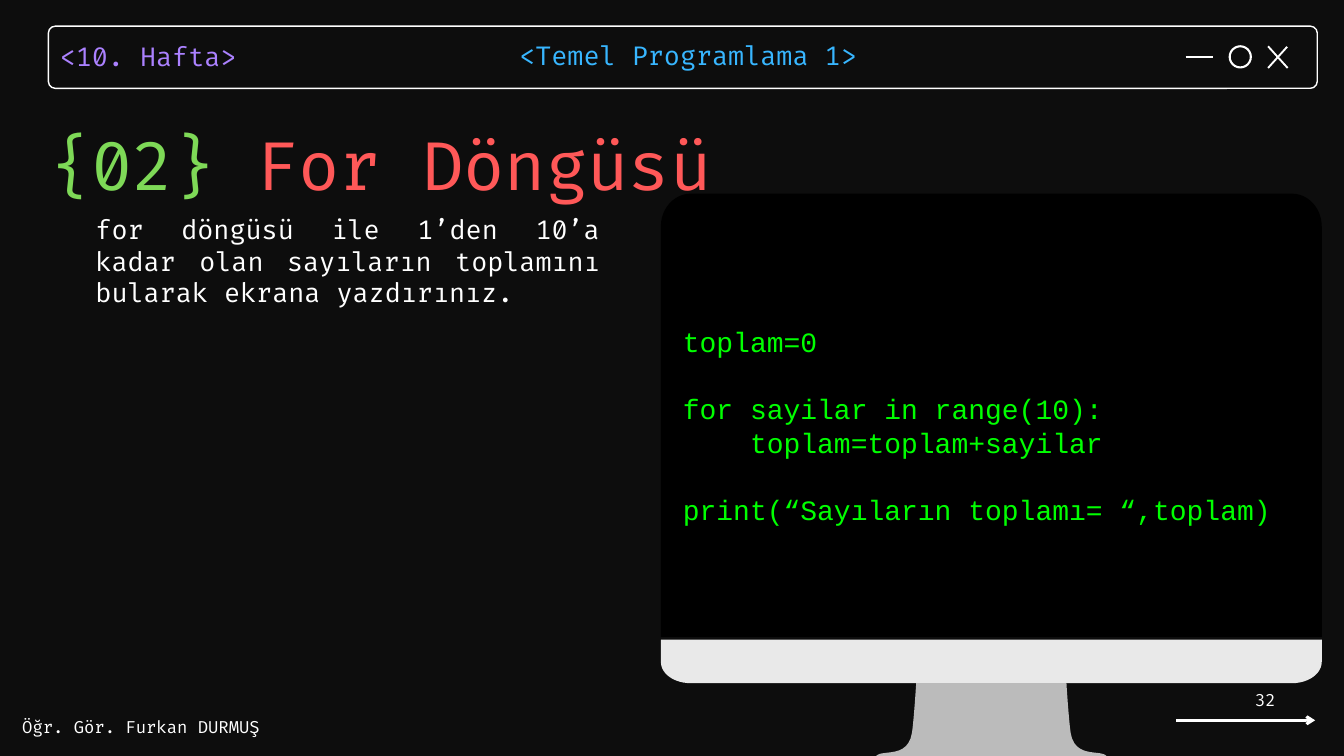
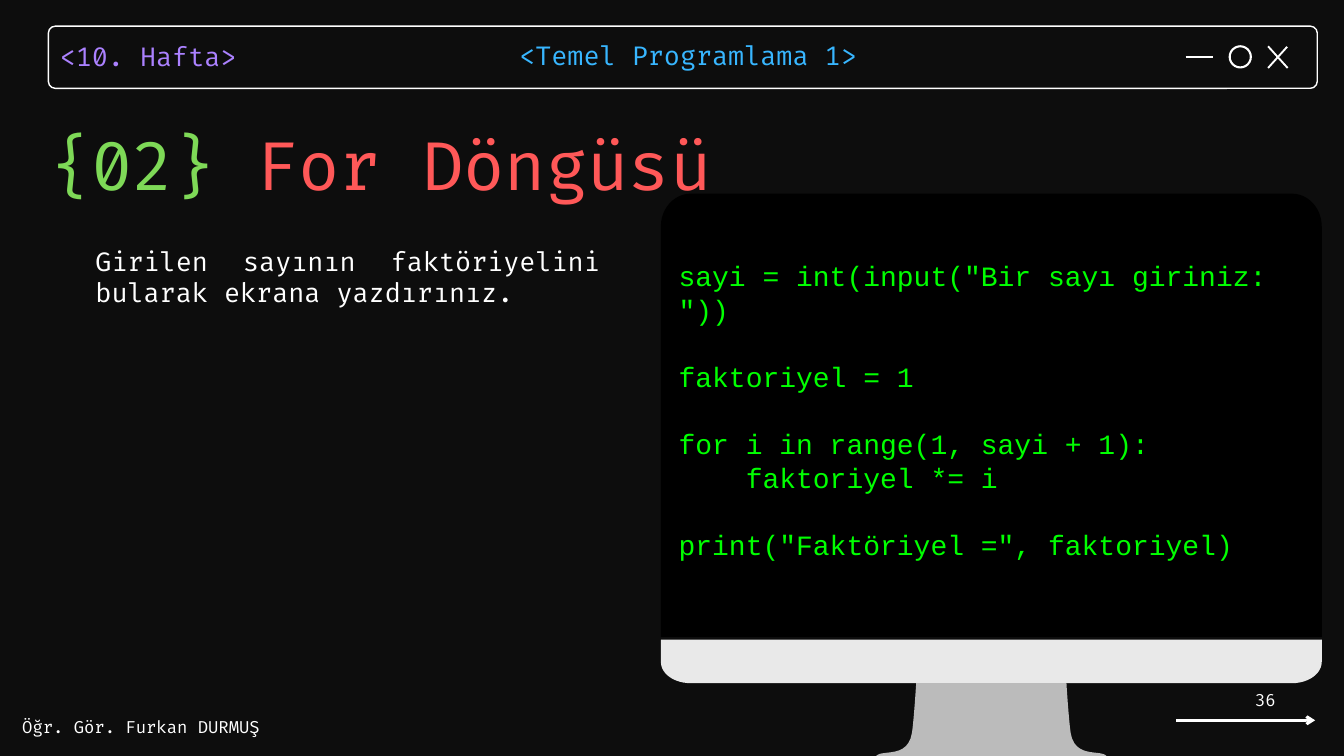
from dataclasses import dataclass

from lxml.etree import SubElement
from pptx import Presentation
from pptx.dml.color import RGBColor
from pptx.enum.shapes import MSO_CONNECTOR, MSO_SHAPE
from pptx.enum.text import MSO_ANCHOR, PP_ALIGN
from pptx.oxml.ns import qn
from pptx.util import Cm, Pt


@dataclass(frozen=True)
class Theme:
    background: str = "0D0D0D"
    white: str = "FFFFFF"
    week: str = "AB81FF"
    course: str = "38B6FF"
    number: str = "7ED957"
    heading: str = "FF5858"
    screen: str = "000000"
    chin: str = "E9E9E9"
    stand: str = "BBBBBB"
    code: str = "00FF00"
    font: str = "Fira Code"
    code_font: str = "Courier New"
    title_size: float = 72
    code_size: float = 30
    body_size: float = 28
    small_size: float = 18
    title_leading: float = 102.6
    header_leading: float = 39.2
    code_gap: float = 36


THEME = Theme()
MONITOR_CENTRE = 37.47
CURVE_STEPS = 12

BEZEL = [
    [(0, 7.32)],
    [(11.35, 7.32)],
    [(11.98, 7.32), (12.49, 7.87), (12.49, 8.56)],
    [(12.49, 24.08)],
]
CHIN = [
    [(0, 24.18)],
    [(12.49, 24.18)],
    [(12.49, 25.02)],
    [(12.49, 25.48), (11.98, 25.83), (11.35, 25.83)],
]
STAND = [
    [(0, 25.83)],
    [(2.84, 25.83)],
    [(2.84, 25.83), (2.92, 27.15), (3, 27.71)],
    [(3.15, 28.65), (4.06, 28.35), (4.32, 28.55)],
    [(4.37, 28.58), (4.34, 28.63), (4.29, 28.63)],
]

SUM_TASK = "for döngüsü ile 1’den 10’a kadar olan sayıların toplamını bularak ekrana yazdırınız."
SUM_CODE = """toplam=0

for sayilar in range(10):
    toplam=toplam+sayilar

print(“Sayıların toplamı= “,toplam)"""

FACTORIAL_TASK = "Girilen sayının faktöriyelini bularak ekrana yazdırınız."
FACTORIAL_CODE = """sayi = int(input("Bir sayı giriniz: "))

faktoriyel = 1

for i in range(1, sayi + 1):
    faktoriyel *= i

print("Faktöriyel =", faktoriyel)"""


def rgb(value):
    return RGBColor.from_string(value)


def lengths(*values):
    return [Cm(value) for value in values]


def style_font(font, name, size, color=None):
    font.name = name
    font.size = Pt(size)
    if color:
        font.color.rgb = rgb(color)


def add_frame(slide, box, anchor=MSO_ANCHOR.TOP, insets=(0, 0)):
    frame = slide.shapes.add_textbox(*lengths(*box)).text_frame
    frame.word_wrap = True
    frame.vertical_anchor = anchor
    frame.margin_left = frame.margin_right = Cm(insets[0])
    frame.margin_top = frame.margin_bottom = Cm(insets[1])
    return frame


def add_label(slide, box, runs, size, leading=None, align=None, **frame_options):
    paragraph = add_frame(slide, box, **frame_options).paragraphs[0]
    paragraph.alignment = align
    if leading:
        paragraph.line_spacing = Pt(leading)
    shared_color = runs[0][1] if len(runs) == 1 else None
    style_font(paragraph.font, THEME.font, size, shared_color)
    for text, color in runs:
        run = paragraph.add_run()
        run.text = text
        if not shared_color:
            run.font.color.rgb = rgb(color)


def add_code(slide, box, source):
    frame = add_frame(slide, box)
    paragraph = None
    for block in source.split("\n\n"):
        for position, line in enumerate(block.split("\n")):
            is_first = paragraph is None
            paragraph = frame.paragraphs[0] if is_first else frame.add_paragraph()
            paragraph.text = line
            style_font(paragraph.font, THEME.code_font, THEME.code_size, THEME.code)
            if position == 0 and not is_first:
                paragraph.space_before = Pt(THEME.code_gap)


def add_line(slide, start, end, width, arrow=False):
    line = slide.shapes.add_connector(MSO_CONNECTOR.STRAIGHT, *lengths(*start, *end))
    line.line.color.rgb = rgb(THEME.white)
    line.line.width = Pt(width)
    if arrow:
        SubElement(line.line._get_or_add_ln(), qn("a:tailEnd"), type="arrow")
    SubElement(line._element.spPr, qn("a:effectLst"))


def paint(shape, fill=None, outline=None, width=1):
    shape.shadow.inherit = False
    if fill:
        shape.fill.solid()
        shape.fill.fore_color.rgb = rgb(fill)
    else:
        shape.fill.background()
    if outline:
        shape.line.color.rgb = rgb(outline)
        shape.line.width = Pt(width)
    else:
        shape.line.fill.background()


def add_preset(slide, preset, box, **colors):
    shape = slide.shapes.add_shape(preset, *lengths(*box))
    paint(shape, **colors)
    return shape


def bezier(p0, p1, p2, p3):
    for step in range(1, CURVE_STEPS + 1):
        t = step / CURVE_STEPS
        u = 1 - t
        yield tuple(
            u**3 * a + 3 * u * u * t * b + 3 * u * t * t * c + t**3 * d
            for a, b, c, d in zip(p0, p1, p2, p3)
        )


def add_symmetric(slide, right_half, fill):
    points = []
    for segment in right_half:
        points += bezier(points[-1], *segment) if len(segment) == 3 else segment
    points += [(-x, y) for x, y in reversed(points)]
    outline = [(Cm(MONITOR_CENTRE + x), Cm(y)) for x, y in points]
    builder = slide.shapes.build_freeform(*outline[0])
    builder.add_line_segments(outline[1:], close=True)
    paint(builder.convert_to_shape(), fill=fill)


def add_header(slide):
    add_label(slide, (2.26, 1.32, 8.64, 1.35), [("<10. Hafta>", THEME.week)],
              THEME.body_size, THEME.header_leading)
    bar = add_preset(slide, MSO_SHAPE.ROUNDED_RECTANGLE, (1.83, 0.99, 47.96, 2.35),
                     outline=THEME.white, width=1.5)
    bar.adjustments[0] = 0.11
    add_line(slide, (47.93, 1.75), (48.67, 2.57), 2)
    add_line(slide, (48.65, 1.77), (47.93, 2.57), 2)
    add_line(slide, (44.81, 2.16), (45.85, 2.16), 2)
    add_preset(slide, MSO_SHAPE.OVAL, (46.48, 1.75, 0.8, 0.8),
               outline=THEME.white, width=2.25)
    add_label(slide, (19.63, 1.3, 13.44, 1.35), [("<Temel Programlama 1>", THEME.course)],
              THEME.body_size, THEME.header_leading)


def add_footer(slide, page):
    add_line(slide, (44.45, 27.23), (49.71, 27.23), 3, arrow=True)
    add_label(slide, (0.84, 27.1, 9.32, 0.76), [("Öğr. Gör. Furkan DURMUŞ", THEME.white)],
              THEME.small_size)
    add_label(slide, (42.55, 25.93, 5.92, 1.02), [(page, THEME.white)], THEME.small_size,
              align=PP_ALIGN.RIGHT, anchor=MSO_ANCHOR.MIDDLE, insets=(0.25, 0.13))


def add_monitor(slide):
    for part, color in ((BEZEL, THEME.screen), (CHIN, THEME.chin), (STAND, THEME.stand)):
        add_symmetric(slide, part, color)
    add_preset(slide, MSO_SHAPE.RECTANGLE, (26.04, 8.23, 22.96, 15.49),
               fill=THEME.screen, outline=THEME.screen, width=2)


def add_exercise(deck, page, task, source, code_box):
    slide = deck.slides.add_slide(deck.slide_layouts[6])
    slide.background.fill.solid()
    slide.background.fill.fore_color.rgb = rgb(THEME.background)
    add_header(slide)
    add_label(slide, (3.61, 8.05, 19.05, 3.58), [(task, THEME.white)], THEME.body_size,
              align=PP_ALIGN.JUSTIFY, anchor=MSO_ANCHOR.BOTTOM)
    add_label(slide, (1.9, 4.09, 48.9, 3.58),
              [("{02} ", THEME.number), ("For Döngüsü", THEME.heading)],
              THEME.title_size, THEME.title_leading)
    add_monitor(slide)
    add_code(slide, code_box, source)
    add_footer(slide, page)


def main():
    deck = Presentation()
    deck.slide_width, deck.slide_height = lengths(50.8, 28.58)
    add_exercise(deck, "32", SUM_TASK, SUM_CODE, (25.81, 12.27, 23.6, 7.7))
    add_exercise(deck, "36", FACTORIAL_TASK, FACTORIAL_CODE, (25.65, 9.78, 23.6, 10.26))
    deck.save("out.pptx")


if __name__ == "__main__":
    main()
